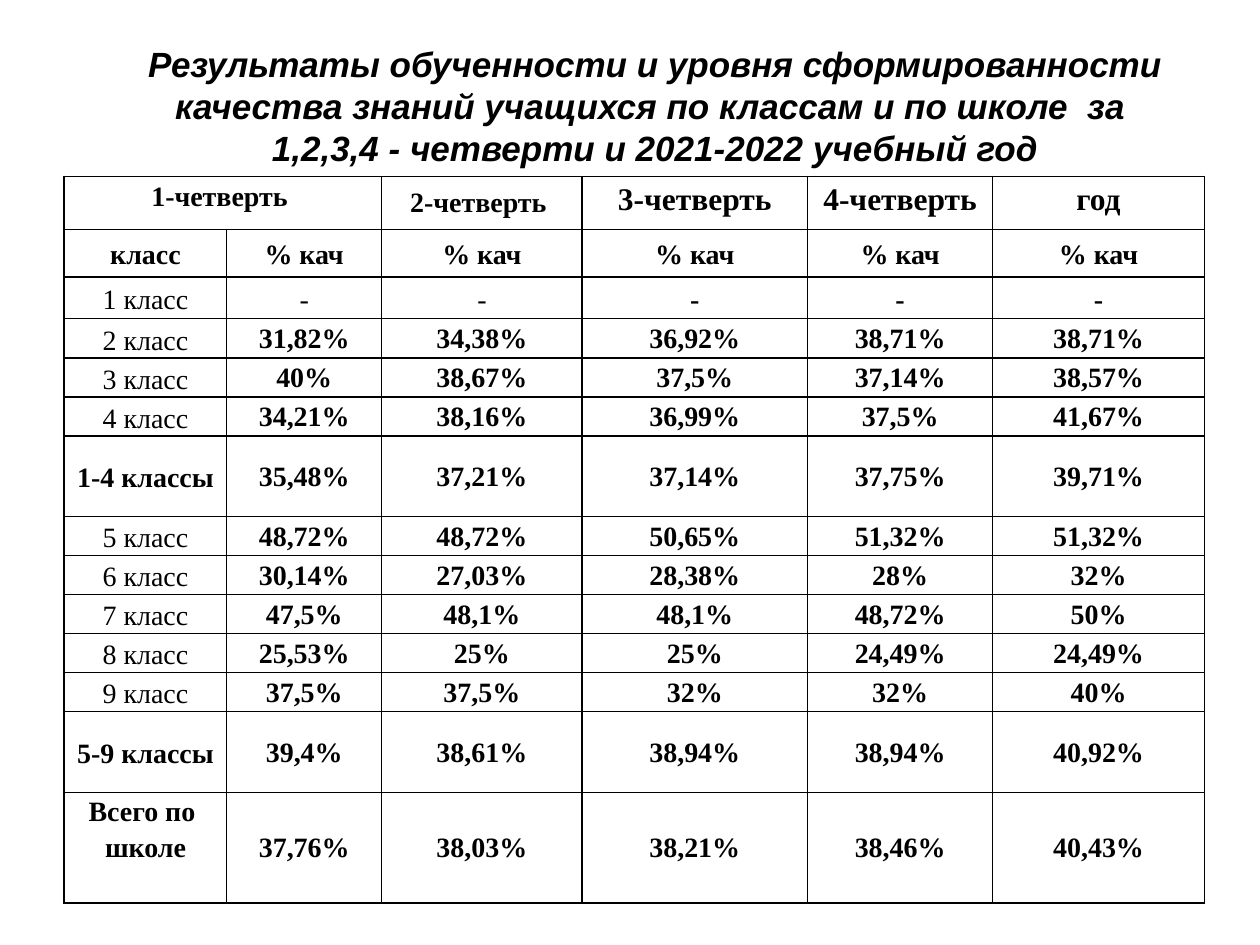
from dataclasses import dataclass

from lxml import etree
from pptx import Presentation
from pptx.dml.color import RGBColor
from pptx.enum.text import MSO_ANCHOR, MSO_AUTO_SIZE, PP_ALIGN
from pptx.oxml.ns import qn
from pptx.util import Inches, Pt

TOP, MIDDLE = MSO_ANCHOR.TOP, MSO_ANCHOR.MIDDLE
CENTER = PP_ALIGN.CENTER
NO_AUTOFIT = MSO_AUTO_SIZE.NONE


@dataclass(frozen=True)
class Theme:
    ink: str = "000000"
    title_font: str = "Arial"
    table_font: str = "Times New Roman"
    title_size: float = 20
    quarter_size: float = 18
    body_size: float = 16
    border_width: float = 1
    loose_spacing: float = 1.15


THEME = Theme()
SLIDE_SIZE = (10, 7.5)
TITLE_BOX = (0.67, 0.29, 9.06, 1.11)
TABLE_ORIGIN = (0.51, 1.4)
COLUMN_WIDTHS = [1.29, 1.23, 1.59, 1.79, 1.47, 1.68]
CLASS_HEIGHT, SUMMARY_HEIGHT = 0.31, 0.64
ROW_HEIGHTS = [
    0.42, 0.38, 0.33, *[CLASS_HEIGHT] * 3, SUMMARY_HEIGHT,
    *[CLASS_HEIGHT] * 5, SUMMARY_HEIGHT, 0.88,
]
WIDE_INSETS = (0.1, 0.05, 0.1, 0.05)
LABEL_INSETS = (0.07, 0, 0.07, 0)
VALUE_INSETS = (0.01, 0.01, 0.01, 0)

TITLE_LINES = [
    "Результаты обученности и уровня сформированности качества знаний учащихся по классам и по школе  за ",
    "1,2,3,4 - четверти и 2021-2022 учебный год",
]
PERIODS = ["1-четверть ", "", "2-четверть ", "3-четверть", "4-четверть", "год"]
MEASURES = ["класс"] + ["% кач"] * 5
UNGRADED = ["1 класс"] + ["-"] * 5
RESULTS = [
    ["2 класс", "31,82%", "34,38%", "36,92%", "38,71%", "38,71%"],
    ["3 класс", "40%", "38,67%", "37,5%", "37,14%", "38,57%"],
    ["4 класс", "34,21%", "38,16%", "36,99%", "37,5%", "41,67%"],
    ["1-4 классы", "35,48%", "37,21%", "37,14%", "37,75%", "39,71%"],
    ["5 класс", "48,72%", "48,72%", "50,65%", "51,32%", "51,32%"],
    ["6 класс", "30,14%", "27,03%", "28,38%", "28%", "32%"],
    ["7 класс", "47,5%", "48,1%", "48,1%", "48,72%", "50%"],
    ["8 класс", "25,53%", "25%", "25%", "24,49%", "24,49%"],
    ["9 класс", "37,5%", "37,5%", "32%", "32%", "40%"],
    ["5-9 классы", "39,4%", "38,61%", "38,94%", "38,94%", "40,92%"],
    ["Всего по \nшколе", "37,76%", "38,03%", "38,21%", "38,46%", "40,43%"],
]


def apply_format(target, values):
    for attribute, value in values.items():
        setattr(target, attribute, value)


def write_lines(frame, lines, font_format, spacing=1.0):
    for index, line in enumerate(lines):
        paragraph = frame.add_paragraph() if index else frame.paragraphs[0]
        apply_format(paragraph, {"alignment": CENTER, "line_spacing": spacing})
        run = paragraph.add_run()
        run.text = line
        apply_format(run.font, font_format)
        run.font.color.rgb = RGBColor.from_string(THEME.ink)


def draw_borders(cell):
    properties = cell._tc.get_or_add_tcPr()
    for position, side in enumerate(("a:lnL", "a:lnR", "a:lnT", "a:lnB")):
        border = etree.Element(qn(side), w=str(Pt(THEME.border_width)))
        fill = etree.SubElement(border, qn("a:solidFill"))
        etree.SubElement(fill, qn("a:srgbClr"), val=THEME.ink)
        properties.insert(position, border)


def write_cell(cell, text, bold=True, size=THEME.body_size, spacing=1.0,
               insets=VALUE_INSETS, anchor=MIDDLE):
    sides = ("margin_left", "margin_top", "margin_right", "margin_bottom")
    apply_format(cell, dict(zip(sides, map(Inches, insets))))
    cell.vertical_anchor = anchor
    font_format = {"name": THEME.table_font, "size": Pt(size), "bold": bold}
    write_lines(cell.text_frame, text.split("\n"), font_format, spacing)


def period_style(column):
    if column >= 3:
        return {"size": THEME.quarter_size, "insets": WIDE_INSETS, "anchor": TOP}
    insets = WIDE_INSETS if column else LABEL_INSETS
    return {"spacing": THEME.loose_spacing, "insets": insets, "anchor": TOP}


def label_style(text):
    return {
        "bold": not text.endswith(" класс"),
        "spacing": THEME.loose_spacing,
        "insets": LABEL_INSETS,
        "anchor": TOP if "\n" in text else MIDDLE,
    }


def cell_style(row, column, text):
    if row == 0:
        return period_style(column)
    if column == 0 or row == 1:
        return label_style(text)
    if row == 2:
        return label_style(text) | {"bold": column >= 3}
    return {}


def add_results_table(slide):
    content = [PERIODS, MEASURES, UNGRADED, *RESULTS]
    size = (sum(COLUMN_WIDTHS), sum(ROW_HEIGHTS))
    table = slide.shapes.add_table(
        len(content), len(COLUMN_WIDTHS), *map(Inches, TABLE_ORIGIN + size)
    ).table
    apply_format(table, {"first_row": False, "horz_banding": False})
    for column, width in zip(table.columns, COLUMN_WIDTHS):
        column.width = Inches(width)
    for row, height in zip(table.rows, ROW_HEIGHTS):
        row.height = Inches(height)
    table.cell(0, 0).merge(table.cell(0, 1))
    for row, texts in enumerate(content):
        for column, text in enumerate(texts):
            cell = table.cell(row, column)
            cell.fill.background()
            draw_borders(cell)
            if text:
                write_cell(cell, text, **cell_style(row, column, text))


def set_title(slide):
    title = slide.shapes.title
    apply_format(title, dict(zip(("left", "top", "width", "height"), map(Inches, TITLE_BOX))))
    apply_format(title.text_frame, {
        "word_wrap": True, "auto_size": NO_AUTOFIT, "vertical_anchor": TOP,
    })
    write_lines(title.text_frame, TITLE_LINES, {
        "name": THEME.title_font, "size": Pt(THEME.title_size), "bold": True, "italic": True,
    })


def main():
    presentation = Presentation()
    apply_format(presentation, dict(zip(("slide_width", "slide_height"), map(Inches, SLIDE_SIZE))))
    slide = presentation.slides.add_slide(presentation.slide_layouts[5])
    set_title(slide)
    add_results_table(slide)
    presentation.save("out.pptx")


if __name__ == "__main__":
    main()
